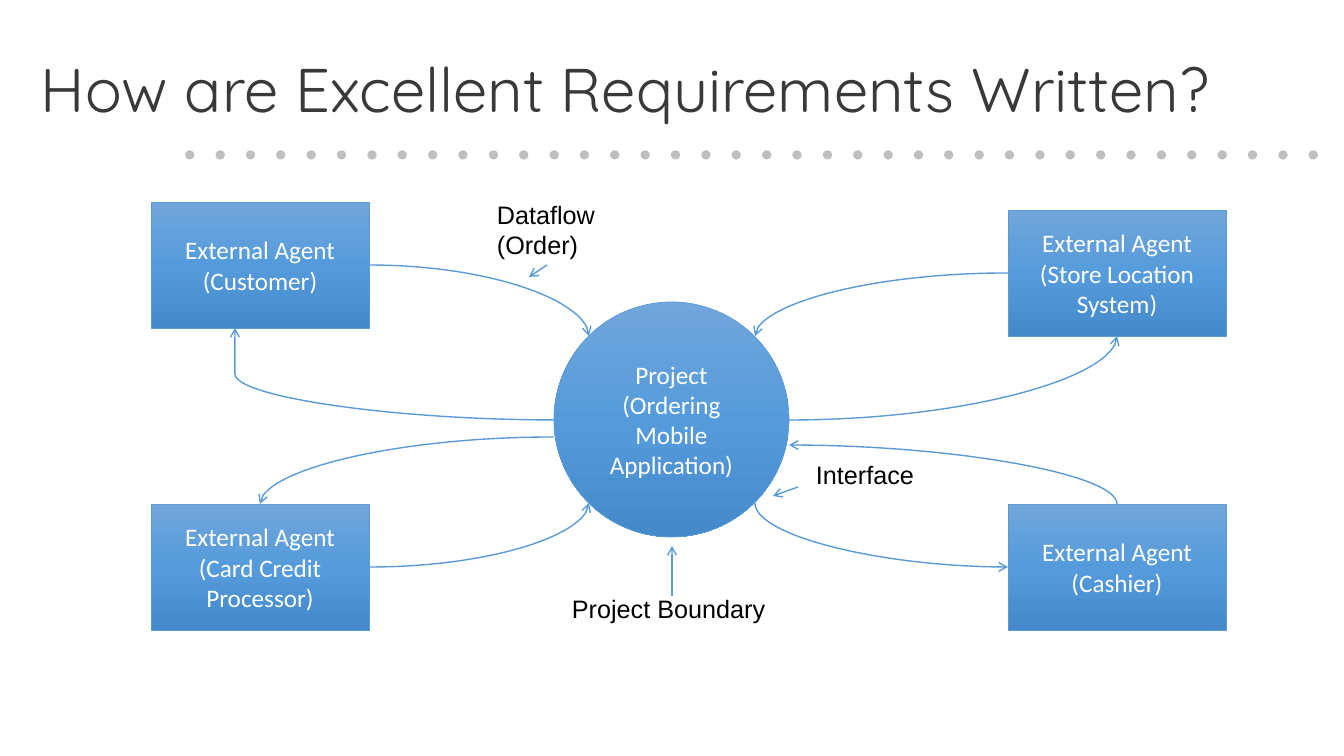
from lxml.etree import SubElement
from pptx import Presentation
from pptx.dml.color import RGBColor
from pptx.enum.shapes import MSO_CONNECTOR as CONNECTOR, MSO_SHAPE as SHAPE
from pptx.enum.text import MSO_ANCHOR as ANCHOR, MSO_AUTO_SIZE as AUTO_SIZE, PP_ALIGN as ALIGN
from pptx.oxml.ns import qn
from pptx.util import Pt

# Content: lengths in px, 100.8 px to the inch
COLOURS = {"title": "3B3838", "dots": "BFBFBF", "line": "5B9BD5", "white": "FFFFFF",
           "label": "000000", "top": "71A6DB", "middle": "559BDB", "bottom": "448ACA"}
GRADIENT = [(0, "top"), (50, "middle"), (100, "bottom")]

TITLE = "How are Excellent Requirements Written?"
DOT_COUNT = 38
AGENT_SIZE = (218, 126)
AGENTS = [  # left, top, text
    (1008, 210, "External Agent\n(Store Location System)"),
    (151, 504, "External Agent\n(Card Credit Processor)"),
    (1008, 504, "External Agent\n(Cashier)"),
    (151, 202, "External Agent\n(Customer)"),
]
PROJECT = (554, 302, 235, 235, "Project\n(Ordering Mobile Application)")
LABELS = [  # left, top, width, height, text
    (562, 588, 216, 40, "Project Boundary"),
    (487, 194, 121, 72, "Dataflow\n(Order)"),
    (806, 454, 119, 40, "Interface"),
]
# Each curve leaves its first point level and meets its second upright;
# the last value is the end that carries the arrowhead
CURVES = [
    (370, 265, 589, 336, "tailEnd"),
    (1008, 567, 755, 503, "headEnd"),
    (1008, 273, 755, 336, "tailEnd"),
    (370, 567, 589, 503, "tailEnd"),
    (789, 420, 1117, 336, "tailEnd"),
    (789, 445, 1117, 504, "headEnd"),
    (554, 437, 260, 504, "tailEnd"),
]
BENT_CURVE = (554, 420, 235, 328)
POINTERS = [(547, 265, 529, 277), (798, 487, 773, 496), (672, 596, 672, 546)]

EMU_PER_PX = 914400 / 100.8


def px(*lengths):
    return [round(length * EMU_PER_PX) for length in lengths]


def colour(name):
    return RGBColor.from_string(COLOURS[name])


def write(shape, text, size, font, colour_name, align=ALIGN.LEFT, bold=False):
    shape.text_frame.text = text
    for paragraph in shape.text_frame.paragraphs:
        paragraph.alignment = align
        for run in paragraph.runs:
            run.font.size = Pt(size)
            run.font.name = font
            run.font.bold = bold
            run.font.color.rgb = colour(colour_name)


def add_text(box, *style, wrap=False, **options):
    shape = slide.shapes.add_textbox(*px(*box))
    write(shape, *style, **options)
    shape.text_frame.word_wrap = wrap
    shape.text_frame.auto_size = AUTO_SIZE.NONE if wrap else AUTO_SIZE.SHAPE_TO_FIT_TEXT
    return shape


def add_node(kind, left, top, width, height, text):
    shape = slide.shapes.add_shape(kind, *px(left, top, width, height))
    shape.shadow.inherit = False
    shape.fill.gradient()
    shape.fill.gradient_angle = 270
    stops = shape._element.spPr.find(qn("a:gradFill")).find(qn("a:gsLst"))
    for stop in list(stops):
        stops.remove(stop)
    for percent, name in GRADIENT:
        stop = SubElement(stops, qn("a:gs"), pos=str(percent * 1000))
        SubElement(stop, qn("a:srgbClr"), val=COLOURS[name])
    shape.line.color.rgb = colour("line")
    shape.line.width = Pt(0.5)
    write(shape, text, 18, "Calibri", "white", ALIGN.CENTER)
    shape.text_frame.word_wrap = True
    shape.text_frame.vertical_anchor = ANCHOR.MIDDLE


def add_arrow(kind, points, arrow_end="tailEnd"):
    connector = slide.shapes.add_connector(kind, *px(*points))
    connector.line.color.rgb = colour("line")
    connector.line.width = Pt(1)
    properties = connector._element.spPr
    SubElement(properties.find(qn("a:ln")), qn("a:" + arrow_end), type="arrow")
    SubElement(properties, qn("a:effectLst"))
    return properties.find(qn("a:prstGeom"))


presentation = Presentation()
presentation.slide_width, presentation.slide_height = px(1344, 756)
slide = presentation.slides.add_slide(presentation.slide_layouts[6])

# Dotted rule and title
add_text((158, 93, 1189, 85), ". " * DOT_COUNT, 44, "Calibri", "dots",
         align=ALIGN.RIGHT, bold=True)
title = add_text((31, 20, 1288, 146), TITLE, 44, "Quicksand", "title", wrap=True)
title.text_frame.vertical_anchor = ANCHOR.MIDDLE
title.text_frame.paragraphs[0].line_spacing = 0.9

# Project and external agents
add_node(SHAPE.OVAL, *PROJECT)
for left, top, text in AGENTS:
    add_node(SHAPE.FLOWCHART_PROCESS, left, top, *AGENT_SIZE, text)

# Dataflows
for *points, arrow_end in CURVES:
    add_arrow(CONNECTOR.CURVE, points, arrow_end).set("prst", "curvedConnector2")
bent = add_arrow(CONNECTOR.CURVE, BENT_CURVE)
SubElement(bent.get_or_add_avLst(), qn("a:gd"), name="adj1", fmla="val 100000")

# Labels and their pointers
for *box, text in LABELS:
    add_text(box, text, 18, "Arial", "label")
for points in POINTERS:
    add_arrow(CONNECTOR.STRAIGHT, points)

presentation.save("out.pptx")
